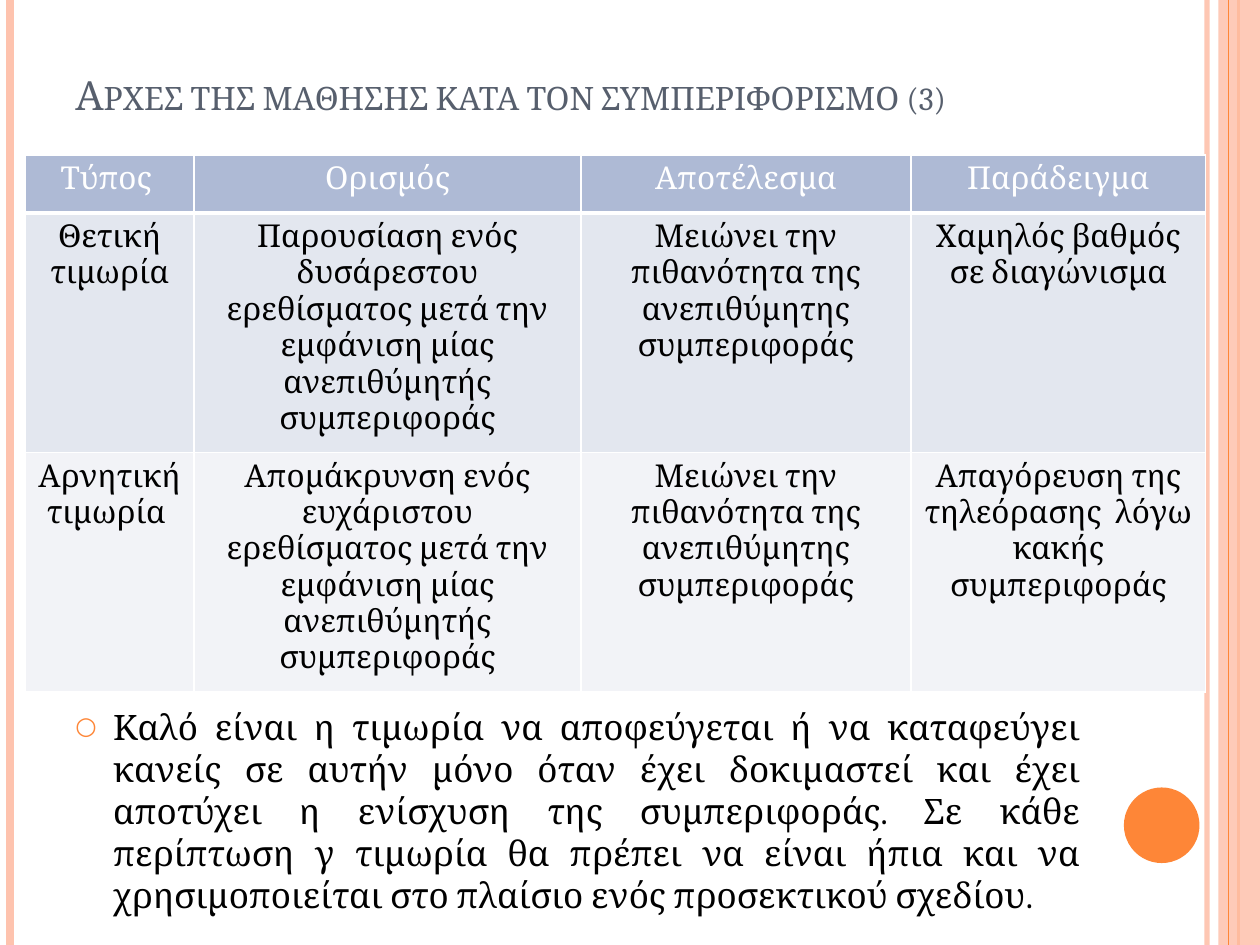
import pptx
import pptx.dml.color
import pptx.enum.shapes
import pptx.enum.text
import pptx.oxml
import pptx.oxml.ns
import pptx.util

RGBColor = pptx.dml.color.RGBColor
Align = pptx.enum.text.PP_ALIGN
Anchor = pptx.enum.text.MSO_ANCHOR
Shape = pptx.enum.shapes.MSO_SHAPE

WHITE = RGBColor(0xFF, 0xFF, 0xFF)
BLACK = RGBColor(0, 0, 0)
SLATE = RGBColor(0x57, 0x5F, 0x6D)
ORANGE = RGBColor(0xFE, 0x86, 0x37)
PEACH = RGBColor(0xFE, 0xC3, 0xAE)
HEADER_BLUE = RGBColor(0xAE, 0xBA, 0xD5)
BAND_DARK = RGBColor(0xE3, 0xE7, 0xEF)
BAND_LIGHT = RGBColor(0xF2, 0xF3, 0xF7)

COLUMNS, ROWS = 100, 75

TITLE = "Αρχες της μαθησης κατα τον συμπεριφορισμο (3)"
ADVICE = (
    "Καλό είναι η τιμωρία να αποφεύγεται ή να καταφεύγει κανείς σε αυτήν μόνο "
    "όταν έχει δοκιμαστεί και έχει αποτύχει η ενίσχυση της συμπεριφοράς. Σε κάθε "
    "περίπτωση γ τιμωρία θα πρέπει να είναι ήπια και να χρησιμοποιείται στο "
    "πλαίσιο ενός προσεκτικού σχεδίου. "
)
RESULT = "Μειώνει την πιθανότητα της ανεπιθύμητης συμπεριφοράς"
PUNISHMENT_TYPES = [
    ["Τύπος ", "Ορισμός", "Αποτέλεσμα", "Παράδειγμα"],
    ["Θετική τιμωρία",
     "Παρουσίαση ενός δυσάρεστου ερεθίσματος μετά την εμφάνιση μίας ανεπιθύμητής συμπεριφοράς",
     RESULT, "Χαμηλός βαθμός σε διαγώνισμα"],
    ["Αρνητική τιμωρία ",
     "Απομάκρυνση ενός ευχάριστου ερεθίσματος μετά την εμφάνιση μίας ανεπιθύμητής συμπεριφοράς",
     RESULT, "Απαγόρευση της τηλεόρασης  λόγω κακής συμπεριφοράς"],
]


def add_element(parent, tag, **attributes):
    element = pptx.oxml.parse_xml(f"<{tag} {pptx.oxml.ns.nsdecls('a')}/>")
    for name, value in attributes.items():
        element.set(name, str(value))
    parent.append(element)
    return element


def set_opacity(element, percent):
    color = next(element.iter(pptx.oxml.ns.qn("a:srgbClr")))
    add_element(color, "a:alpha", val=percent * 1000)


class SlideBuilder:
    """Holds the font and the current slide; lengths are grid columns and rows."""

    font_name = "Cambria"

    def __init__(self, presentation):
        self.presentation = presentation
        self.slide = presentation.slides.add_slide(presentation.slide_layouts[6])

    def x(self, columns):
        return round(self.presentation.slide_width * columns / COLUMNS)

    def y(self, rows):
        return round(self.presentation.slide_height * rows / ROWS)

    def box(self, left, top, width, height):
        return self.x(left), self.y(top), self.x(width), self.y(height)

    def vertical_rule(self, column, color, width, opacity=100):
        line = self.slide.shapes.add_connector(
            pptx.enum.shapes.MSO_CONNECTOR.STRAIGHT,
            self.x(column), 0, self.x(column), self.y(ROWS))
        line.line.color.rgb = color
        line.line.width = pptx.util.Pt(width)
        properties = line._element.spPr
        if opacity < 100:
            set_opacity(properties, opacity)
        add_element(properties, "a:effectLst")

    def filled_shape(self, kind, box, color, opacity=100):
        shape = self.slide.shapes.add_shape(kind, *self.box(*box))
        shape.shadow.inherit = False
        shape.fill.solid()
        shape.fill.fore_color.rgb = color
        shape.line.fill.background()
        if opacity < 100:
            set_opacity(shape._element.spPr, opacity)

    def add_styled_run(self, paragraph, text, size, color, alignment):
        paragraph.alignment = alignment
        run = paragraph.add_run()
        run.text = text
        run.font.color.rgb = color
        for name, value in {"name": self.font_name, "size": pptx.util.Pt(size)}.items():
            setattr(run.font, name, value)
        return run

    def text(self, box, text, size, color, alignment=Align.LEFT, anchor=Anchor.TOP):
        frame = self.slide.shapes.add_textbox(*self.box(*box)).text_frame
        for name, value in {"word_wrap": True, "vertical_anchor": anchor}.items():
            setattr(frame, name, value)
        return self.add_styled_run(frame.paragraphs[0], text, size, color, alignment)

    def title(self, box, text):
        run = self.text(box, text, 23, SLATE, anchor=Anchor.BOTTOM)
        run.font._element.set("cap", "small")

    def bullet(self, box, text):
        run = self.text(box, text, 20, BLACK, Align.JUSTIFY)
        properties = run._r.getparent().get_or_add_pPr()
        indent = self.x(3)
        properties.set("marL", str(indent))
        properties.set("indent", str(-indent))
        bullet_color = add_element(properties, "a:buClr")
        add_element(bullet_color, "a:srgbClr", val=ORANGE)
        add_element(properties, "a:buSzPct", val=70000)
        add_element(properties, "a:buFont", typeface=self.font_name)
        add_element(properties, "a:buChar", char="○")

    def cell_borders(self, cell, top, bottom):
        properties = cell._tc.get_or_add_tcPr()
        for side, width in {"L": 1, "R": 1, "T": top, "B": bottom}.items():
            line = add_element(properties, f"a:ln{side}", w=pptx.util.Pt(width))
            add_element(add_element(line, "a:solidFill"), "a:srgbClr", val=WHITE)

    def table(self, left, top, widths, heights, texts, fills):
        box = self.box(left, top, sum(widths), sum(heights))
        table = self.slide.shapes.add_table(len(heights), len(widths), *box).table
        for column, width in zip(table.columns, widths):
            column.width = self.x(width)
        for index, (row, height) in enumerate(zip(table.rows, heights)):
            row.height = self.y(height)
            for cell, text in zip(row.cells, texts[index]):
                self.cell_borders(cell, 3 if index == 1 else 1, 3 if index == 0 else 1)
                cell.fill.solid()
                cell.fill.fore_color.rgb = fills[index]
                self.add_styled_run(cell.text_frame.paragraphs[0], text, 18,
                                    BLACK if index else WHITE, Align.CENTER)


def main():
    presentation = pptx.Presentation()
    presentation.slide_width = pptx.util.Inches(10)
    presentation.slide_height = pptx.util.Inches(7.5)
    builder = SlideBuilder(presentation)

    builder.vertical_rule(95.8, PEACH, 3, opacity=93)
    builder.vertical_rule(0.8, PEACH, 4.5)
    builder.vertical_rule(98.3, ORANGE, 1.5)
    builder.filled_shape(Shape.RECTANGLE, (96.7, 0, 3.3, ROWS), PEACH, opacity=87)
    builder.vertical_rule(97.5, ORANGE, 0.75)
    builder.filled_shape(Shape.OVAL, (89.2, 62.5, 6, 6), ORANGE)

    builder.title((5, 3, 81.7, 6.9), TITLE)
    builder.bullet((5, 55.5, 81.7, 17.5), ADVICE)
    builder.table(2, 12.3, [13.4, 30.7, 26.2, 23.4], [4.6, 18.3, 18.3],
                  PUNISHMENT_TYPES, [HEADER_BLUE, BAND_DARK, BAND_LIGHT])

    presentation.save("out.pptx")


if __name__ == "__main__":
    main()
